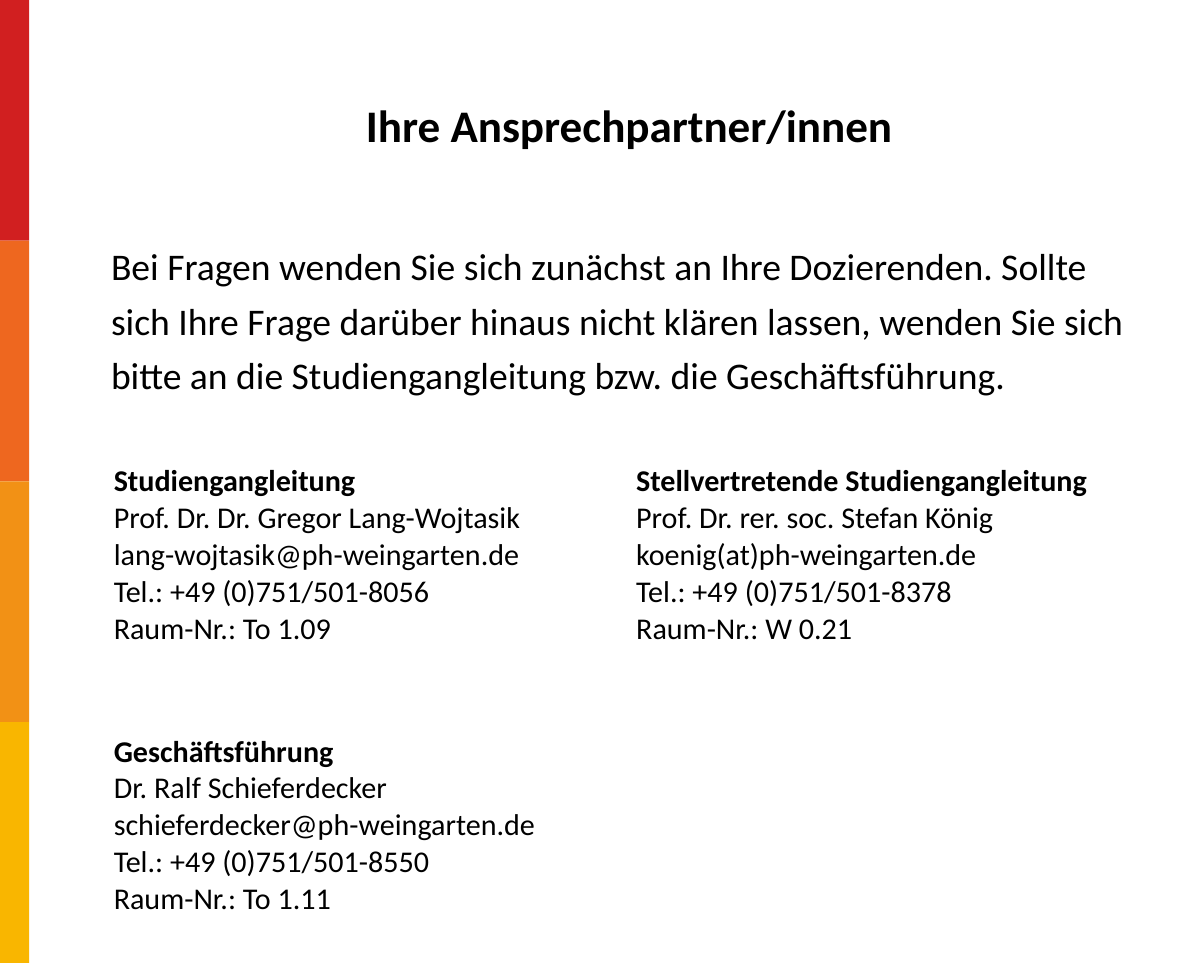
from pptx import Presentation
from pptx.dml.color import RGBColor
from pptx.enum.shapes import MSO_SHAPE
from pptx.enum.text import MSO_ANCHOR, PP_ALIGN
from pptx.util import Inches, Pt

BLACK = RGBColor(0x00, 0x00, 0x00)
RED = RGBColor(0xD1, 0x1F, 0x20)
DARK_ORANGE = RGBColor(0xEE, 0x67, 0x1F)
ORANGE = RGBColor(0xF2, 0x91, 0x15)
YELLOW = RGBColor(0xF9, 0xB6, 0x00)

SLIDE_WIDTH, SLIDE_HEIGHT = 17.78, 14.22
CONTENT_LEFT, CONTENT_WIDTH = 1.58, 15.43
ROW_HEIGHTS = [3.99, 3.25]

TITLE = "Ihre Ansprechpartner/innen"
ADVICE = (
    "Bei Fragen wenden Sie sich zunächst an Ihre Dozierenden. "
    "Sollte sich Ihre Frage darüber hinaus nicht klären lassen, "
    "wenden Sie sich bitte an die Studiengangleitung bzw. die Geschäftsführung."
)
# Each contact is a role followed by its detail lines.
CONTACT_ROWS = [
    [
        ["Studiengangleitung", "Prof. Dr. Dr. Gregor Lang-Wojtasik",
         "lang-wojtasik@ph-weingarten.de",
         "Tel.: +49 (0)751/501-8056", "Raum-Nr.: To 1.09"],
        ["Stellvertretende Studiengangleitung", "Prof. Dr. rer. soc. Stefan König",
         "koenig(at)ph-weingarten.de",
         "Tel.: +49 (0)751/501-8378", "Raum-Nr.: W 0.21"],
    ],
    [
        ["Geschäftsführung", "Dr. Ralf Schieferdecker",
         "schieferdecker@ph-weingarten.de",
         "Tel.: +49 (0)751/501-8550", "Raum-Nr.: To 1.11"],
        [],
    ],
]


def add_run(paragraph, text, size, bold=False):
    run = paragraph.add_run()
    run.text = text
    font_format = {"name": "Calibri", "size": Pt(size), "bold": bold}
    for attribute, value in font_format.items():
        setattr(run.font, attribute, value)
    run.font.color.rgb = BLACK


def add_color_bar(slide, colors):
    """Stack equal blocks of the given colours along the left edge."""
    height = SLIDE_HEIGHT / len(colors)
    for index, color in enumerate(colors):
        block = slide.shapes.add_shape(
            MSO_SHAPE.RECTANGLE, 0, Inches(index * height), Inches(0.43), Inches(height))
        block.shadow.inherit = False
        block.fill.solid()
        block.fill.fore_color.rgb = color
        block.line.fill.background()


def add_text(slide, text, top, height, size, bold=False,
             anchor=MSO_ANCHOR.TOP, alignment=PP_ALIGN.LEFT, line_spacing=1.0):
    frame = slide.shapes.add_textbox(
        Inches(CONTENT_LEFT), Inches(top), Inches(CONTENT_WIDTH), Inches(height)).text_frame
    frame_format = {"word_wrap": True, "vertical_anchor": anchor}
    frame_format.update({f"margin_{side}": Inches(0.06)
                         for side in ("left", "top", "right", "bottom")})
    for attribute, value in frame_format.items():
        setattr(frame, attribute, value)
    paragraph = frame.paragraphs[0]
    paragraph.alignment = alignment
    paragraph.line_spacing = line_spacing
    add_run(paragraph, text, size, bold)


def fill_contact(cell, lines):
    cell.fill.background()
    paragraph = cell.text_frame.paragraphs[0]
    for index, line in enumerate(lines):
        if index:
            paragraph.add_line_break()
        add_run(paragraph, line, 32, bold=index == 0)


def add_contacts(slide):
    table = slide.shapes.add_table(
        len(CONTACT_ROWS), len(CONTACT_ROWS[0]), Inches(CONTENT_LEFT), Inches(6.79),
        Inches(CONTENT_WIDTH), Inches(sum(ROW_HEIGHTS))).table
    table.first_row = False
    table.horz_banding = False
    for row, height, contacts in zip(table.rows, ROW_HEIGHTS, CONTACT_ROWS):
        row.height = Inches(height)
        for cell, lines in zip(row.cells, contacts):
            fill_contact(cell, lines)


def main():
    presentation = Presentation()
    presentation.slide_width = Inches(SLIDE_WIDTH)
    presentation.slide_height = Inches(SLIDE_HEIGHT)
    slide = presentation.slides.add_slide(presentation.slide_layouts[6])

    add_color_bar(slide, [RED, DARK_ORANGE, ORANGE, YELLOW])
    add_text(slide, TITLE, 0.87, 1.93, 48, bold=True,
             anchor=MSO_ANCHOR.MIDDLE, alignment=PP_ALIGN.CENTER)
    add_text(slide, ADVICE, 3.4, 9.58, 40, line_spacing=1.2)
    add_contacts(slide)
    presentation.save("out.pptx")


if __name__ == "__main__":
    main()
